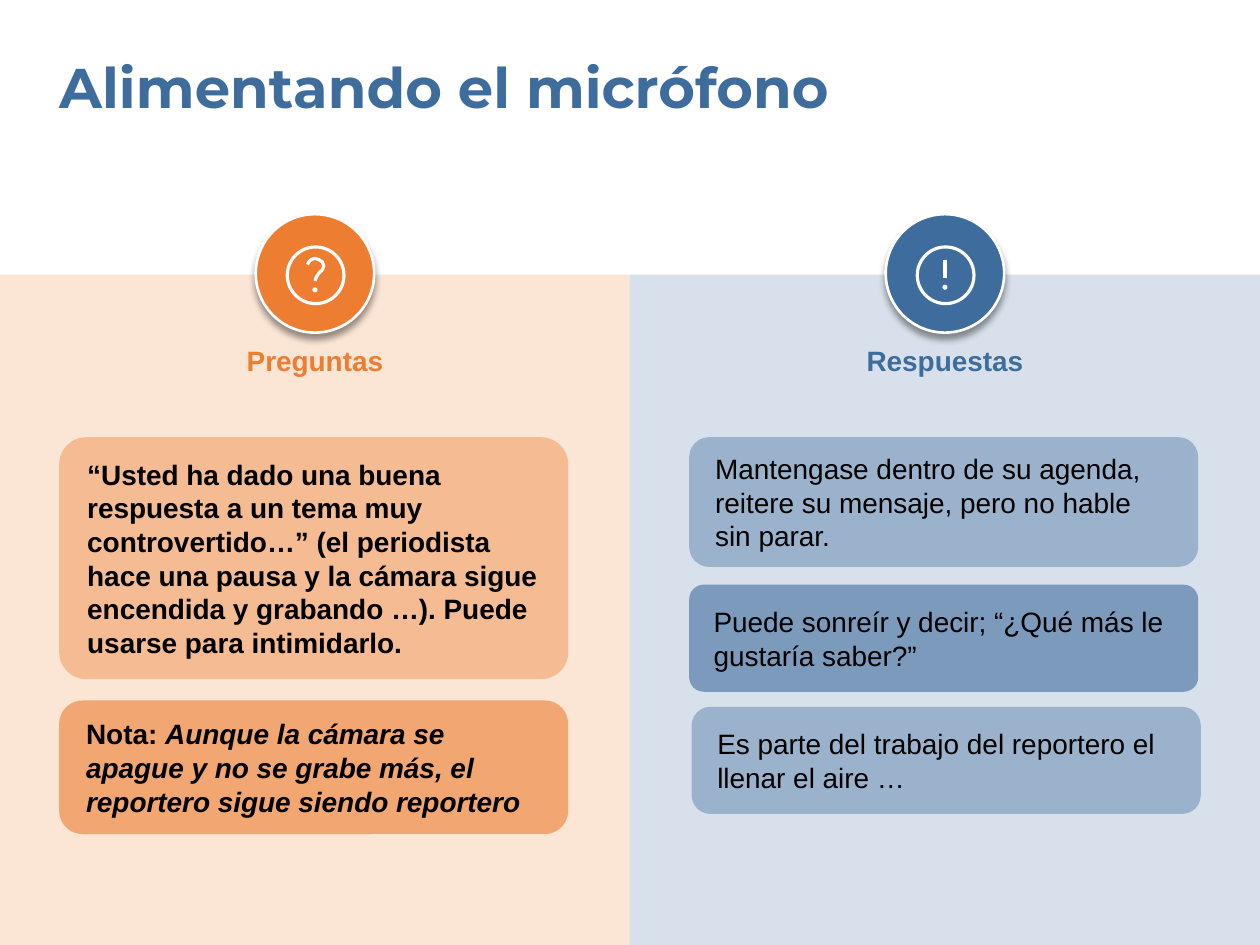
from pptx import Presentation
from pptx.dml.color import RGBColor
from pptx.enum.shapes import MSO_SHAPE as SHAPE
from pptx.enum.text import MSO_ANCHOR as ANCHOR, PP_ALIGN as ALIGN
from pptx.oxml import parse_xml
from pptx.oxml.ns import nsdecls, qn
from pptx.util import Inches, Pt

ORANGE, BLUE, WHITE = "ED7D31", "3D6C9D", "FFFFFF"
rgb = RGBColor.from_string


def add_shape(kind, box, color, opacity=100):
    sp = s.shapes.add_shape(kind, *map(Inches, box))
    sp.shadow.inherit = False
    sp.line.fill.background()
    sp.fill.solid()
    sp.fill.fore_color.rgb = rgb(color)
    if opacity < 100:
        clr = sp._element.spPr.find(qn("a:solidFill")).find(qn("a:srgbClr"))
        clr.append(parse_xml(f'<a:alpha {nsdecls("a")} val="{opacity * 1000}"/>'))
    return sp


def add_text(box, text, size, font, color, align=ALIGN.LEFT):
    tf = s.shapes.add_textbox(*map(Inches, box)).text_frame
    tf.word_wrap = True
    tf.margin_left = tf.margin_right = tf.margin_top = tf.margin_bottom = 0
    p = tf.paragraphs[0]
    p.text, p.alignment = text, align
    f = p.runs[0].font
    f.size, f.name, f.bold, f.color.rgb = Pt(size), font, True, rgb(color)


prs = Presentation()
prs.slide_width, prs.slide_height = Inches(10), Inches(7.5)
s = prs.slides.add_slide(prs.slide_layouts[6])

# Title
add_text((0.47, 0.42, 9.02, 0.54), "Alimentando el micrófono", 32, "Montserrat", BLUE)

# Icon strokes, measured from the centre of the badge
question = [(-0.06, -0.08), (-0.05, -0.1), (-0.03, -0.12), (0, -0.13),
            (0.03, -0.12), (0.06, -0.1), (0.07, -0.07), (0.06, -0.04),
            (0.03, -0.01), (0.01, 0.02), (0, 0.05)]
exclamation = [(0, -0.12), (0, 0.03)]

# Two columns: panel, round badge with icon, heading
columns = [(0, ORANGE, "Preguntas", question, 0.12),
           (5, BLUE, "Respuestas", exclamation, 0.1)]
cy = 2.18
for x, color, heading, stroke, dot_y in columns:
    cx = x + 2.5
    add_shape(SHAPE.RECTANGLE, (x, cy, 5, 5.32), color, 20)

    badge = add_shape(SHAPE.OVAL, (cx - 0.47, cy - 0.48, 0.94, 0.94), color)
    badge.line.color.rgb, badge.line.width = rgb(WHITE), Pt(1.5)
    badge._element.spPr.find(qn("a:effectLst")).append(parse_xml(
        f'<a:outerShdw {nsdecls("a")} blurRad="{Pt(4)}" dist="{Pt(3)}" dir="5400000" '
        'algn="t" rotWithShape="0"><a:srgbClr val="000000"><a:alpha val="40000"/>'
        '</a:srgbClr></a:outerShdw>'))

    ring = add_shape(SHAPE.OVAL, (cx - 0.22, cy - 0.22, 0.45, 0.45), color)
    points = [(Inches(cx + dx), Inches(cy + dy)) for dx, dy in stroke]
    builder = s.shapes.build_freeform(*points[0])
    builder.add_line_segments(points[1:], close=False)
    mark = builder.convert_to_shape()
    mark.shadow.inherit = False
    for sp in (ring, mark):
        sp.fill.background()
        sp.line.color.rgb, sp.line.width = rgb(WHITE), Pt(1.8)
    add_shape(SHAPE.OVAL, (cx - 0.02, cy + dot_y - 0.02, 0.04, 0.04), WHITE)

    add_text((x, 2.73, 5, 0.27), heading, 16, "Arial", color, ALIGN.CENTER)

# Cards: left, top, height, corner, colour, opacity, runs of (text, bold, italic)
cards = [
    (0.47, 3.47, 1.92, 0.112, ORANGE, 40,
     [("“Usted ha dado una buena respuesta a un tema muy controvertido…” "
       "(el periodista hace una pausa y la cámara sigue encendida y grabando …). "
       "Puede usarse para intimidarlo.", True, False)]),
    (0.47, 5.56, 1.06, 0.175, ORANGE, 60,
     [("Nota: ", True, False),
      ("Aunque la cámara se apague y no se grabe más, "
       "el reportero sigue siendo reportero", True, True)]),
    (5.47, 3.47, 1.03, 0.153, BLUE, 40,
     [("Mantengase dentro de su agenda, reitere su mensaje, "
       "pero no hable sin parar.", False, False)]),
    (5.47, 4.64, 0.85, 0.136, BLUE, 60,
     [("Puede sonreír y decir; “¿Qué más le gustaría saber?”", False, False)]),
    (5.49, 5.61, 0.85, 0.173, BLUE, 40,
     [("Es parte del trabajo del reportero el llenar el aire …", False, False)]),
]
for left, top, height, corner, color, opacity, runs in cards:
    sp = add_shape(SHAPE.ROUNDED_RECTANGLE, (left, top, 4.04, height), color, opacity)
    sp.adjustments[0] = corner
    tf = sp.text_frame
    tf.word_wrap, tf.vertical_anchor = True, ANCHOR.MIDDLE
    tf.margin_left = tf.margin_right = Inches(0.16)
    tf.margin_top = tf.margin_bottom = Inches(0.08)
    p = tf.paragraphs[0]
    p.alignment = ALIGN.LEFT
    for text, bold, italic in runs:
        r = p.add_run()
        r.text = text
        r.font.size, r.font.name = Pt(16), "Arial"
        r.font.bold, r.font.italic = bold, italic
        r.font.color.rgb = rgb("000000")

prs.save("out.pptx")
